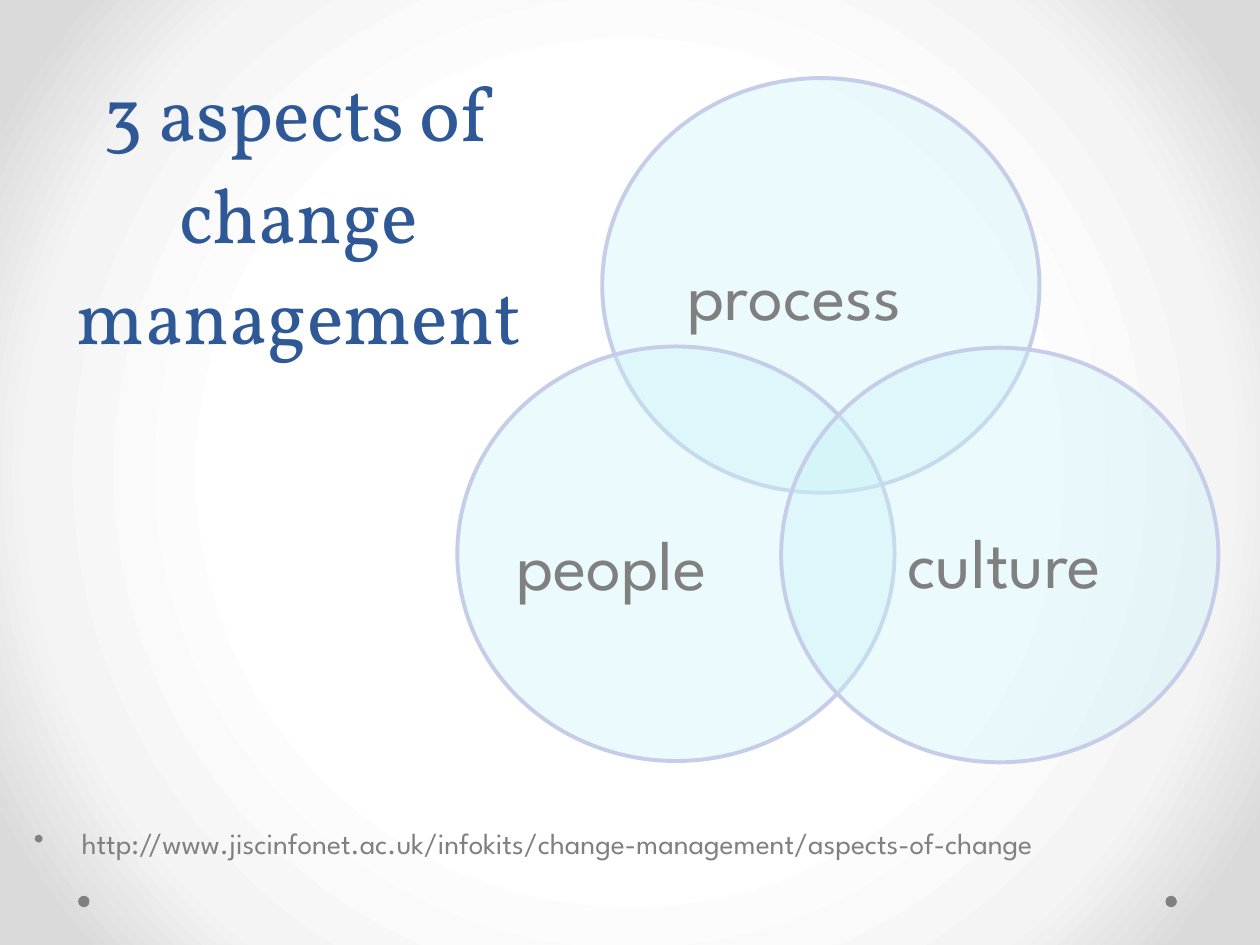
from dataclasses import dataclass

from pptx import Presentation, oxml, util as u
from pptx.dml.color import RGBColor
from pptx.enum import shapes, text
from pptx.oxml.ns import nsdecls, qn

COLUMNS, ROWS = 100, 75


@dataclass(frozen=True)
class Theme:
    heading_font: str = "Vollkorn"
    body_font: str = "League Spartan"
    heading: str = "2F5897"
    grey: str = "808080"
    circle_fill: str = "C8F3F8"
    circle_line: str = "C6CDE8"
    circle_opacity: int = 35
    background: tuple = ((50, "FFFFFF"), (76, "F4F4F4"), (92, "DADADA"))
    title_size: float = 44
    title_leading: float = 58
    label_size: float = 40
    link_size: float = 16.8
    outline: float = 2.25


@dataclass(frozen=True)
class Area:
    """A rectangle in grid columns and rows."""
    column: float
    row: float
    columns: float
    rows: float


@dataclass(frozen=True)
class Aspect:
    name: str
    circle: tuple[float, float]
    label: tuple[float, float]


THEME = Theme()
CIRCLE_SIZE = (34.7, 32.9)
LABEL_SIZE = (23.9, 6.7)
DOT_SIZE = (0.9, 0.9)
DOTS = ((92.5, 71.1), (6.2, 71.1))
TITLE_AREA = Area(5, 0.8, 37.5, 28.3)
LINK_AREA = Area(1.7, 65, 97.5, 3.3)
LINK = "http://www.jiscinfonet.ac.uk/infokits/change-management/aspects-of-change"
ASPECTS = (
    Aspect("process", (47.8, 6.2), (53.6, 19.4)),
    Aspect("people", (36.3, 27.5), (40, 40.8)),
    Aspect("culture", (62, 27.6), (71, 40.7)),
)


def frame(deck, area: Area) -> tuple[int, int, int, int]:
    """Left, top, width and height of a grid area on the slide."""
    column, row = deck.slide_width / COLUMNS, deck.slide_height / ROWS
    return (round(area.column * column), round(area.row * row),
            round(area.columns * column), round(area.rows * row))


def style(para, font: str, size: float, color: str) -> None:
    para.font.name = font
    para.font.size = u.Pt(size)
    para.font.color.rgb = RGBColor.from_string(color)


def paint_background(slide) -> None:
    stops = "".join(
        f'<a:gs pos="{share * 1000}"><a:srgbClr val="{color}"/></a:gs>'
        for share, color in THEME.background)
    slide.element.cSld.insert(0, oxml.parse_xml(
        f'<p:bg {nsdecls("p", "a")}><p:bgPr><a:gradFill rotWithShape="1">'
        f'<a:gsLst>{stops}</a:gsLst><a:path path="circle">'
        '<a:fillToRect l="50000" t="50000" r="50000" b="50000"/></a:path>'
        '</a:gradFill><a:effectLst/></p:bgPr></p:bg>'))


def add_ellipse(deck, slide, area: Area, fill: str):
    ellipse = slide.shapes.add_shape(shapes.MSO_SHAPE.OVAL, *frame(deck, area))
    ellipse.shadow.inherit = False
    ellipse.fill.solid()
    ellipse.fill.fore_color.rgb = RGBColor.from_string(fill)
    ellipse.line.fill.background()
    return ellipse


def add_circle(deck, slide, area: Area) -> None:
    """Add a translucent, outlined circle of the Venn diagram."""
    circle = add_ellipse(deck, slide, area, THEME.circle_fill)
    color = circle.element.spPr.find(qn("a:solidFill")).find(qn("a:srgbClr"))
    color.append(oxml.parse_xml(
        f'<a:alpha {nsdecls("a")} val="{THEME.circle_opacity * 1000}"/>'))
    circle.line.color.rgb = RGBColor.from_string(THEME.circle_line)
    circle.line.width = u.Pt(THEME.outline)


def add_text(deck, slide, area: Area, words: str, size: float):
    box = slide.shapes.add_textbox(*frame(deck, area))
    box.text_frame.word_wrap = True
    para = box.text_frame.paragraphs[0]
    para.text = words
    style(para, THEME.body_font, size, THEME.grey)
    return para


def set_title(deck, slide, words: str) -> None:
    title = slide.shapes.title
    title.left, title.top, title.width, title.height = frame(deck, TITLE_AREA)
    title.text_frame.auto_size = text.MSO_AUTO_SIZE.NONE
    title.text_frame.vertical_anchor = text.MSO_ANCHOR.BOTTOM
    para = title.text_frame.paragraphs[0]
    para.text = words
    para.alignment = text.PP_ALIGN.CENTER
    para.line_spacing = u.Pt(THEME.title_leading)
    style(para, THEME.heading_font, THEME.title_size, THEME.heading)


def add_link(deck, slide) -> None:
    para = add_text(deck, slide, LINK_AREA, LINK, THEME.link_size)
    properties = para._p.get_or_add_pPr()
    indent = u.Inches(0.38)
    properties.set("marL", str(indent))
    properties.set("indent", str(-indent))
    properties.insert(0, oxml.parse_xml(f'<a:buChar {nsdecls("a")} char="•"/>'))


def main() -> None:
    deck = Presentation()
    deck.slide_width, deck.slide_height = u.Inches(10), u.Inches(7.5)
    slide = deck.slides.add_slide(deck.slide_layouts.get_by_name("Title Only"))
    paint_background(slide)
    for place in DOTS:
        add_ellipse(deck, slide, Area(*place, *DOT_SIZE), THEME.grey)
    set_title(deck, slide, "3 aspects of change management")
    add_link(deck, slide)
    for aspect in ASPECTS:
        add_circle(deck, slide, Area(*aspect.circle, *CIRCLE_SIZE))
        add_text(deck, slide, Area(*aspect.label, *LABEL_SIZE),
                 aspect.name, THEME.label_size)
    deck.save("out.pptx")


if __name__ == "__main__":
    main()
